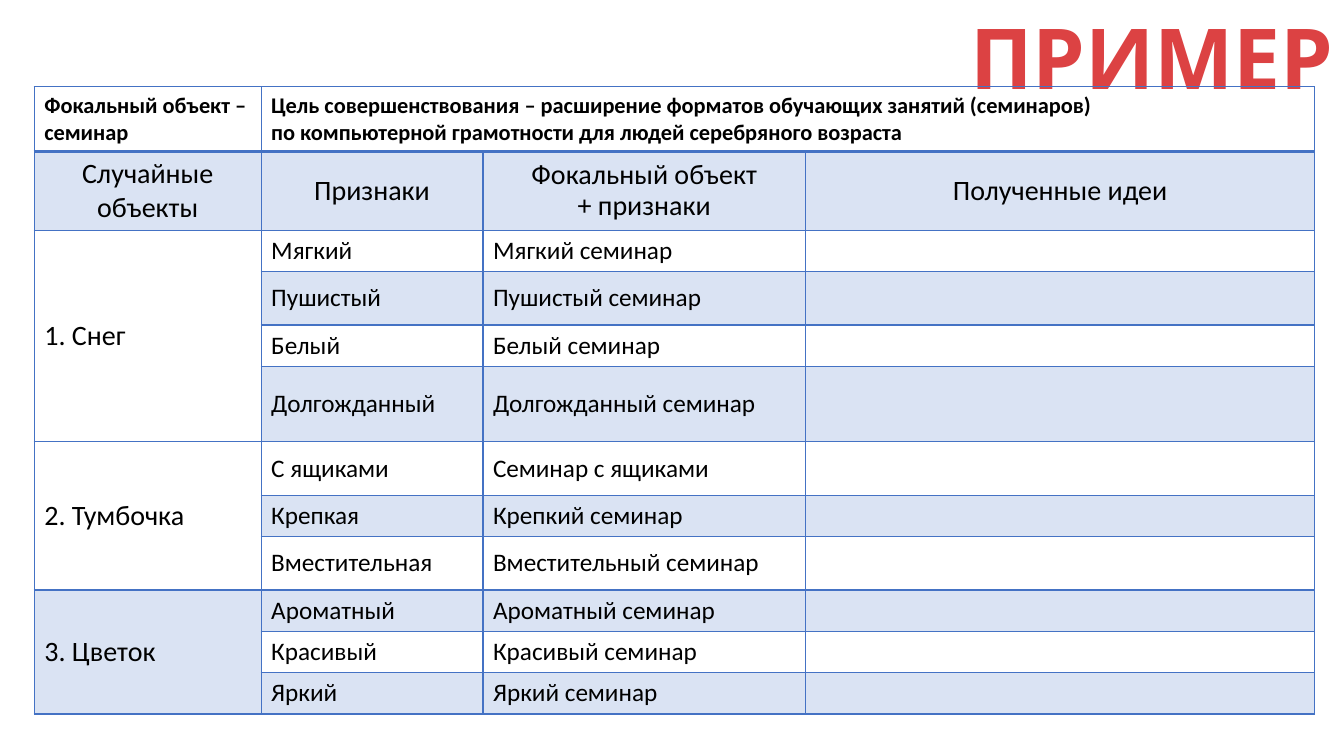
from lxml.etree import SubElement
from pptx import Presentation
from pptx.dml.color import RGBColor
from pptx.enum.text import MSO_ANCHOR, MSO_AUTO_SIZE, PP_ALIGN
from pptx.oxml.ns import qn
from pptx.util import Inches, Pt

BLUE, PALE, RED, BLACK = "4472C4", "DAE3F3", "DC4243", "000000"
COLUMNS = [2.25, 2.2, 3.2, 5.05]
GOAL_HEIGHT, HEADER_HEIGHT = 0.64, 0.78
LOW, MEDIUM, HIGH = 0.41, 0.53, 0.75

GOAL = ["Фокальный объект – семинар",
        "Цель совершенствования – расширение форматов обучающих занятий (семинаров)\v"
        "по компьютерной грамотности для людей серебряного возраста"]
HEADERS = ["Случайные объекты", "Признаки", "Фокальный объект\n+ признаки", "Полученные идеи"]

# Random object -> (feature, focal object with the feature, row height)
OBJECTS = {
    "1. Снег": [("Мягкий", "Мягкий семинар", LOW),
                ("Пушистый", "Пушистый семинар", MEDIUM),
                ("Белый", "Белый семинар", LOW),
                ("Долгожданный", "Долгожданный семинар", HIGH)],
    "2. Тумбочка": [("С ящиками", "Семинар с ящиками", MEDIUM),
                    ("Крепкая", "Крепкий семинар", LOW),
                    ("Вместительная", "Вместительный семинар", MEDIUM)],
    "3. Цветок": [("Ароматный", "Ароматный семинар", LOW),
                  ("Красивый", "Красивый семинар", LOW),
                  ("Яркий", "Яркий семинар", LOW)],
}


def color(value):
    return RGBColor.from_string(value)


def style(paragraph, name, size, value, bold=False, align=PP_ALIGN.LEFT, spacing=1.0):
    font = paragraph.font
    font.name, font.size, font.bold = name, Pt(size), bold
    font.color.rgb = color(value)
    paragraph.alignment, paragraph.line_spacing = align, spacing


def set_borders(cell, bottom=1, top=1):
    properties = cell._tc.get_or_add_tcPr()
    for place, (side, width) in enumerate([("L", 1), ("R", 1), ("T", top), ("B", bottom)]):
        line = SubElement(properties, qn(f"a:ln{side}"), w=str(Pt(width)))
        fill = SubElement(line, qn("a:solidFill"))
        SubElement(fill, qn("a:srgbClr"), val=BLUE)
        properties.insert(place, line)


def fill_cell(cell, text, size, shaded=False, bold=False, align=PP_ALIGN.LEFT,
              anchor=MSO_ANCHOR.MIDDLE):
    cell.text = text
    cell.vertical_anchor = anchor
    if shaded:
        cell.fill.solid()
        cell.fill.fore_color.rgb = color(PALE)
    else:
        cell.fill.background()
    paragraphs = cell.text_frame.paragraphs
    for paragraph in paragraphs:
        style(paragraph, "Calibri", size, BLACK, bold, align, 0.9 if len(paragraphs) > 1 else 1.0)


def add_heading(slide, left, top, width, height):
    heading = slide.shapes.title
    heading.left, heading.top, heading.width, heading.height = map(
        Inches, (left, top, width, height))
    frame = heading.text_frame
    frame.text = "ПРИМЕР"
    frame.auto_size = MSO_AUTO_SIZE.NONE
    frame.vertical_anchor = MSO_ANCHOR.MIDDLE
    style(frame.paragraphs[0], "Karla", 60, RED, True, PP_ALIGN.RIGHT, 0.9)


def add_ideas_table(slide, left, top):
    heights = [GOAL_HEIGHT, HEADER_HEIGHT]
    heights += [height for features in OBJECTS.values() for _, _, height in features]
    table = slide.shapes.add_table(
        len(heights), len(COLUMNS), Inches(left), Inches(top),
        Inches(sum(COLUMNS)), Inches(sum(heights))).table
    table.first_row = table.horz_banding = False
    for column, width in zip(table.columns, COLUMNS):
        column.width = Inches(width)
    for row, height in zip(table.rows, heights):
        row.height = Inches(height)

    # Goal and column headers
    table.cell(0, 1).merge(table.cell(0, 3))
    for column, text in enumerate(GOAL):
        fill_cell(table.cell(0, column), text, 16, bold=True, anchor=MSO_ANCHOR.TOP)
    for column, text in enumerate(HEADERS):
        fill_cell(table.cell(1, column), text, 20, shaded=True, align=PP_ALIGN.CENTER)

    # Objects with their features; every other row is shaded
    row = 2
    for name, features in OBJECTS.items():
        owner = table.cell(row, 0)
        owner.merge(table.cell(row + len(features) - 1, 0))
        fill_cell(owner, name, 20, shaded=row % 2 == 1)
        for feature, combined, _ in features:
            for column, text in enumerate([feature, combined, ""], start=1):
                fill_cell(table.cell(row, column), text, 18, shaded=row % 2 == 1)
            row += 1

    # Grid lines, heavier under the goal
    for index, row_cells in enumerate(table.rows):
        for cell in row_cells.cells:
            set_borders(cell, bottom=2 if index == 0 else 1, top=2 if index == 1 else 1)


def main():
    presentation = Presentation()
    presentation.slide_width, presentation.slide_height = Inches(13.33), Inches(7.5)
    slide = presentation.slides.add_slide(presentation.slide_layouts[5])
    add_heading(slide, 1.83, 0.1, 11.5, 1.03)
    add_ideas_table(slide, 0.34, 0.86)
    presentation.save("out.pptx")


if __name__ == "__main__":
    main()
